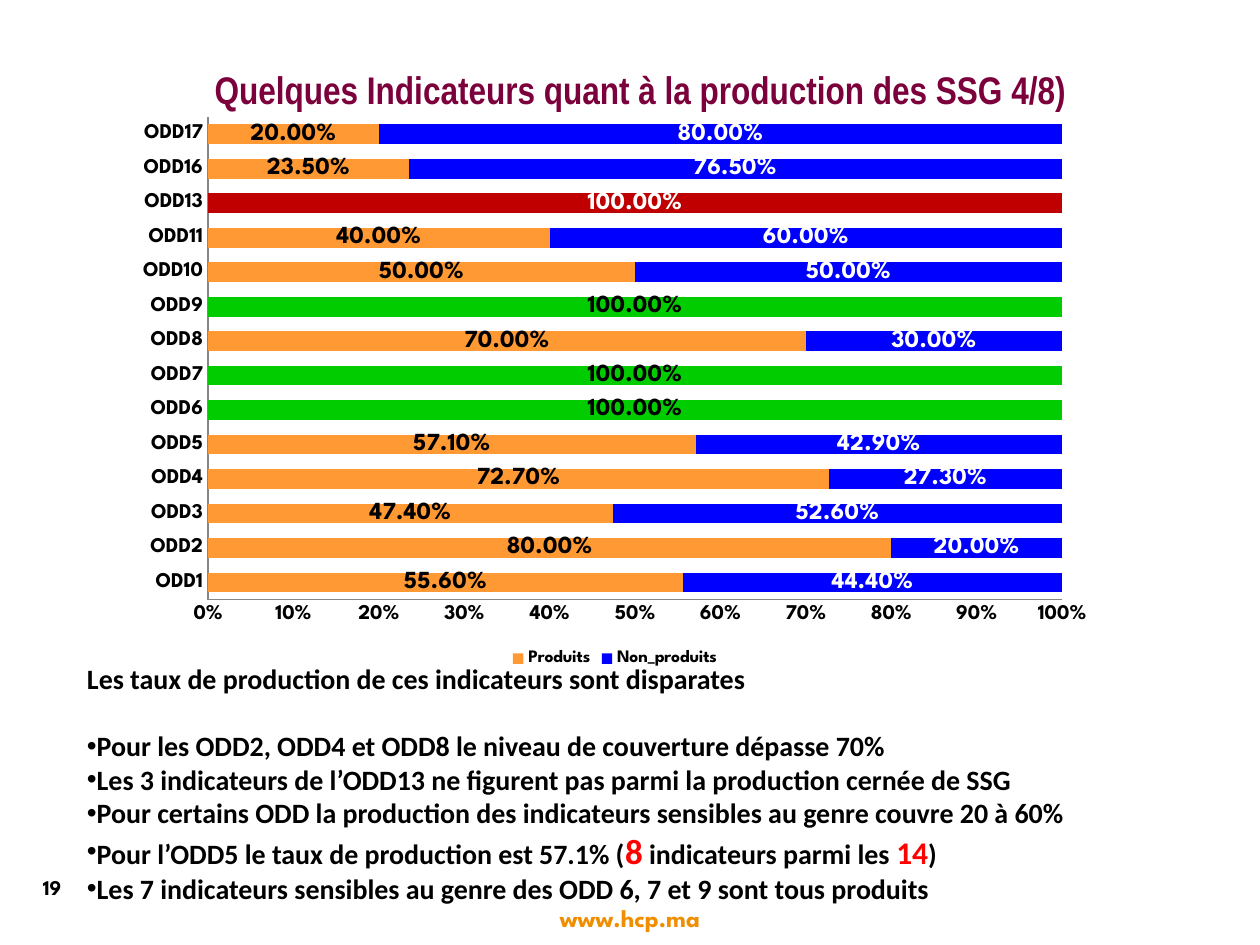
"""Build the slide on the production rates of the gender-sensitive SDG indicators."""
import lxml.etree
import pptx
import pptx.chart.data
import pptx.dml.color
import pptx.enum.chart
import pptx.enum.shapes
import pptx.enum.text
import pptx.oxml
import pptx.oxml.ns
import pptx.util

Pt = pptx.util.Pt
qn = pptx.oxml.ns.qn
ALIGN = pptx.enum.text.PP_ALIGN
ANCHOR = pptx.enum.text.MSO_ANCHOR
CHART = pptx.enum.chart
BRAND = "League Spartan"


def color(code):
    return pptx.dml.color.RGBColor.from_string(code)


def style(font, size, name, code):
    font.size = Pt(size)
    font.name = name
    font.bold = True
    font.color.rgb = color(code)


deck = pptx.Presentation()
deck.slide_width, deck.slide_height = Pt(720), Pt(540)
slide = deck.slides.add_slide(deck.slide_layouts[1])
shapes = slide.shapes
title, body = shapes.title, slide.placeholders[1]

title.left, title.top, title.width, title.height = Pt(31), Pt(31.7), Pt(669.6), Pt(38.9)
frame = title.text_frame
frame.text = "Quelques Indicateurs quant à la production des SSG 4/8)"
frame.auto_size = pptx.enum.text.MSO_AUTO_SIZE.NONE
frame.vertical_anchor = ANCHOR.MIDDLE
frame.paragraphs[0].alignment = ALIGN.CENTER
style(frame.paragraphs[0].runs[0].font, 22, "Arial Narrow", "7B003B")

site = shapes.add_textbox(Pt(275), Pt(512.6), Pt(170), Pt(23.8))
site.text_frame.word_wrap = True
site.text_frame.text = "www.hcp.ma"
line = site.text_frame.paragraphs[0]
line.alignment = ALIGN.CENTER
style(line.runs[0].font, 14, BRAND, "F18E00")

page = shapes.add_shape(pptx.enum.shapes.MSO_SHAPE.OVAL, Pt(11.5), Pt(488.9), Pt(36), Pt(36))
page.shadow.inherit = False
page.fill.background()
page.line.fill.background()
page.text_frame.text = "19"
page.text_frame.vertical_anchor = ANCHOR.MIDDLE
line = page.text_frame.paragraphs[0]
line.alignment = ALIGN.RIGHT
style(line.runs[0].font, 12, BRAND, "000000")

rates = {
    "ODD1": 0.556, "ODD2": 0.8, "ODD3": 0.474, "ODD4": 0.727, "ODD5": 0.571,
    "ODD6": 1, "ODD7": 1, "ODD8": 0.7, "ODD9": 1, "ODD10": 0.5,
    "ODD11": 0.4, "ODD13": 0, "ODD16": 0.235, "ODD17": 0.2,
}
data = pptx.chart.data.CategoryChartData(number_format="0.00%")
data.categories = list(rates)
data.add_series("Produits", list(rates.values()))
data.add_series("Non_produits", [round(1 - rate, 3) for rate in rates.values()])
chart = shapes.add_chart(
    CHART.XL_CHART_TYPE.BAR_STACKED_100, Pt(70.6), Pt(60.5), Pt(561.6), Pt(323.3), data
).chart
style(chart.font, 10, BRAND, "000000")
chart.has_title = False
chart.has_legend = True
chart.legend.position = CHART.XL_LEGEND_POSITION.BOTTOM
chart.legend.include_in_layout = False
style(chart.legend.font, 10, BRAND, "000000")

for axis in (chart.category_axis, chart.value_axis):
    axis.has_major_gridlines = False
    axis.major_tick_mark = axis.minor_tick_mark = CHART.XL_TICK_MARK.NONE
    axis.format.line.color.rgb = color("868686")
    style(axis.tick_labels.font, 12, BRAND, "000000")
chart.value_axis.minimum_scale, chart.value_axis.maximum_scale = 0, 1
chart.value_axis.major_unit = 0.1
chart.value_axis.tick_labels.number_format = "0%"
chart.value_axis.tick_labels.number_format_is_linked = False

plot = chart.plots[0]
plot.gap_width, plot.overlap = 75, 100
plot.vary_by_categories = False
looks = [("FF9933", "000000", "00CC00"), ("0000FF", "FFFFFF", "C00000")]
for series, (fill, ink, full) in zip(plot.series, looks):
    series.format.fill.solid()
    series.format.fill.fore_color.rgb = color(fill)
    for index, value in enumerate(series.values):
        if value == 1:
            point = series.points[index].format.fill
            point.solid()
            point.fore_color.rgb = color(full)
    labels = series.data_labels
    labels.show_value = True
    labels.number_format = "0.00%;;"
    labels.number_format_is_linked = False
    style(labels.font, 14, BRAND, ink)

area = chart.plots[0]._element.getparent()
for old in area.findall(qn("c:layout")):
    area.remove(old)
layout = lxml.etree.Element(qn("c:layout"))
manual = lxml.etree.SubElement(layout, qn("c:manualLayout"))
places = [("layoutTarget", "inner"), ("xMode", "edge"), ("yMode", "edge"),
          ("x", "0.086"), ("y", "0.02"), ("w", "0.869"), ("h", "0.853")]
for name, value in places:
    lxml.etree.SubElement(manual, qn("c:" + name)).set("val", value)
area.insert(0, layout)

body.left, body.top, body.width, body.height = Pt(42.5), Pt(373.7), Pt(640.8), Pt(147.6)
frame = body.text_frame
frame.word_wrap = True
frame.auto_size = pptx.enum.text.MSO_AUTO_SIZE.NONE
frame.vertical_anchor = ANCHOR.MIDDLE
plain, large, mid = (16, "000000"), (20, "FF0000"), (18, "FF0000")
items = [
    [("Les taux de production de ces indicateurs sont disparates", plain)],
    [("Pour les ODD2, ODD4 et ODD8 le niveau de couverture dépasse 70%", plain)],
    [("Les 3 indicateurs de l’ODD13 ne figurent pas parmi la production cernée de SSG", plain)],
    [("Pour certains ODD la production des indicateurs sensibles au genre couvre 20 à 60%", plain)],
    [("Pour l’ODD5 le taux de production est 57.1% (", plain), ("8", large),
     (" indicateurs parmi les ", plain), ("14", mid), (")", plain)],
    [("Les 7 indicateurs sensibles au genre des ODD 6, 7 et 9 sont tous produits", plain)],
]
for index, parts in enumerate(items):
    line = frame.add_paragraph() if index else frame.paragraphs[0]
    props = line._p.get_or_add_pPr()
    props.set("marL", "0")
    props.set("indent", "0")
    if index:
        lxml.etree.SubElement(props, qn("a:buChar")).set("char", "•")
    else:
        lxml.etree.SubElement(props, qn("a:buNone"))
    line.space_before = Pt(0)
    line.space_after = Pt(0 if index else 19.5)
    for text, (size, code) in parts:
        run = line.add_run()
        run.text = text
        style(run.font, size, "Calibri", code)

deck.save("out.pptx")
